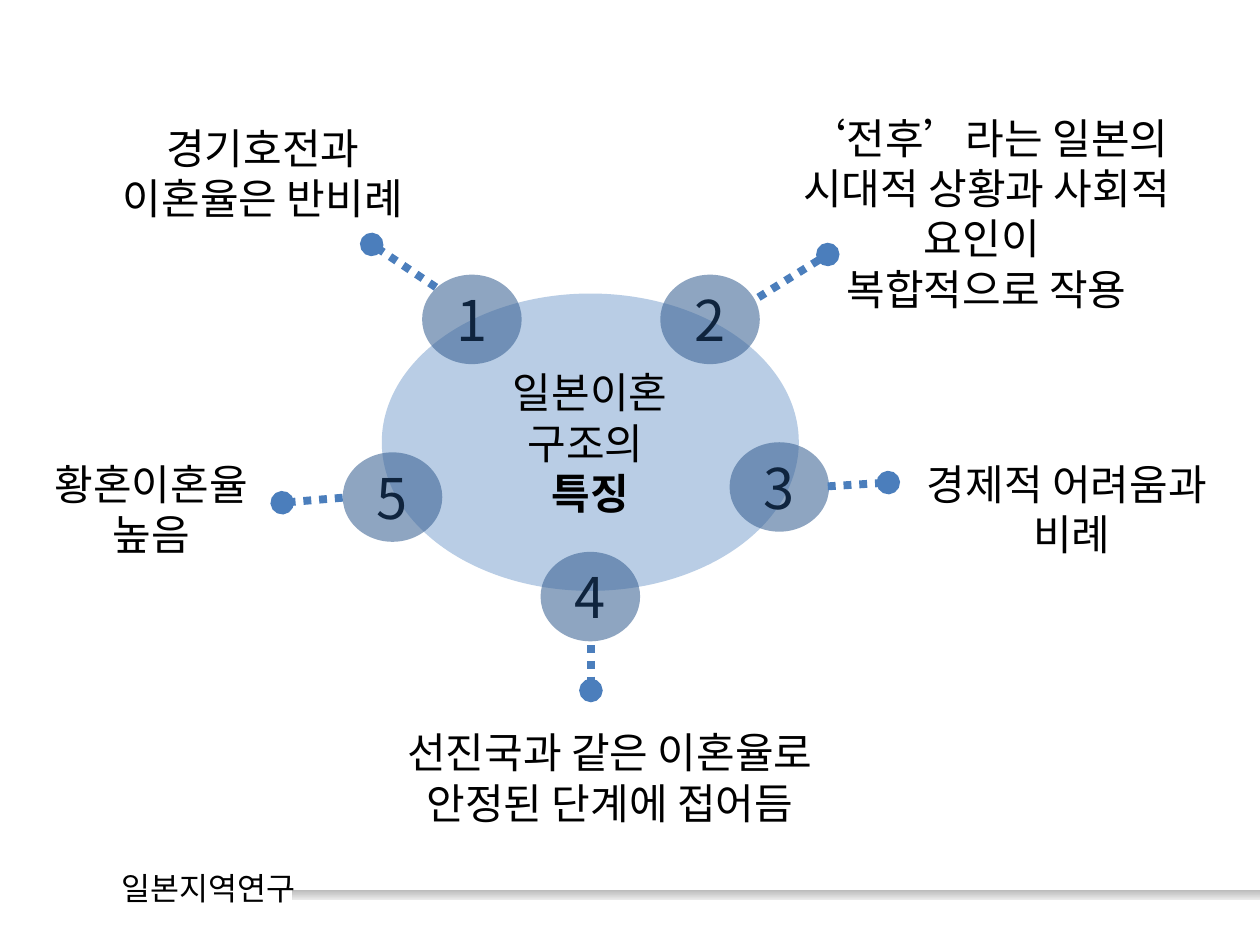
from lxml.etree import SubElement
from pptx import Presentation
from pptx.dml.color import RGBColor
from pptx.enum.dml import MSO_LINE
from pptx.enum.shapes import MSO_CONNECTOR, MSO_SHAPE
from pptx.enum.text import MSO_ANCHOR, MSO_AUTO_SIZE, PP_ALIGN
from pptx.oxml.ns import qn
from pptx.util import Inches, Pt

FONT = "Noto Sans CJK KR"
COLORS = {
    "text": "000000",
    "number": "0F243E",
    "center": "B9CDE5",
    "badge": "376092",
    "pointer": "4B7EBC",
    "bar_top": "B8B8B8",
    "bar_bottom": "E9E9E9",
}
BADGE_SIZE = (0.79, 0.71)

# Badge position, pointer start and end, label box, label paragraphs
FEATURES = [
    ((3.35, 2.18), (3.46, 2.28), (2.95, 1.94), (0.59, 0.92, 2.99, 0.91),
     ["경기호전과 이혼율은 반비례"]),
    ((5.24, 2.18), (6.02, 2.36), (6.57, 2.02), (6.02, 0.84, 3.62, 1.31),
     ["‘전후’라는 일본의 시대적 상황과 사회적 요인이 ", "복합적으로 작용"]),
    ((5.79, 3.51), (6.57, 3.86), (7.05, 3.83), (7.01, 3.59, 2.99, 0.91),
     ["경제적 어려움과 ", "비례"]),
    ((4.29, 4.38), (4.69, 5.12), (4.69, 5.48), (3.11, 5.72, 3.46, 0.91),
     ["선진국과 같은 이혼율로 안정된 단계에 접어듬"]),
    ((2.72, 3.59), (2.72, 3.95), (2.24, 3.99), (0, 3.59, 2.4, 0.94),
     ["황혼이혼율", "높음"]),
]


def color(name):
    return RGBColor.from_string(COLORS[name])


def inches(values):
    return [Inches(value) for value in values]


def write_text(shape, lines, size, color_name="text", bold_last=False):
    """Write one centred paragraph per line, optionally with the last in bold."""
    frame = shape.text_frame
    frame.word_wrap = True
    for index, line in enumerate(lines):
        paragraph = frame.paragraphs[0] if index == 0 else frame.add_paragraph()
        paragraph.alignment = PP_ALIGN.CENTER
        run = paragraph.add_run()
        run.text = line
        font = run.font
        font.name = FONT
        font.size = Pt(size)
        font.color.rgb = color(color_name)
        if bold_last and index == len(lines) - 1:
            font.bold = True
        SubElement(run._r.get_or_add_rPr(), qn("a:ea"), typeface=FONT)


def add_plain_shape(slide, kind, box, fill_name=None, alpha=None):
    """Add a shape without line or shadow; alpha is opacity in percent."""
    shape = slide.shapes.add_shape(kind, *inches(box))
    shape.shadow.inherit = False
    shape.line.fill.background()
    shape.text_frame.vertical_anchor = MSO_ANCHOR.MIDDLE
    if fill_name is None:
        shape.fill.background()
    else:
        shape.fill.solid()
        shape.fill.fore_color.rgb = color(fill_name)
    if alpha is not None:
        rgb = shape._element.spPr.find(f"{qn('a:solidFill')}/{qn('a:srgbClr')}")
        SubElement(rgb, qn("a:alpha"), val=str(alpha * 1000))
    return shape


def add_footer(slide):
    bar = add_plain_shape(slide, MSO_SHAPE.RECTANGLE, (2.32, 7.06, 7.68, 0.08))
    bar.fill.gradient()
    bar.fill.gradient_angle = 270
    for stop, name in zip(bar.fill.gradient_stops, ("bar_top", "bar_bottom")):
        stop.color.rgb = color(name)
    title = add_plain_shape(slide, MSO_SHAPE.ROUNDED_RECTANGLE, (0.75, 6.82, 1.81, 0.45))
    write_text(title, ["일본지역연구"], 18)


def add_center(slide):
    center = add_plain_shape(slide, MSO_SHAPE.OVAL, (3.03, 2.33, 3.31, 2.36), "center")
    write_text(center, ["일본이혼", "구조의 ", "특징"], 24, bold_last=True)


def add_badge(slide, number, position):
    badge = add_plain_shape(slide, MSO_SHAPE.OVAL, position + BADGE_SIZE, "badge", 56)
    write_text(badge, [str(number)], 32, "number")


def add_pointer(slide, start, end):
    """Add a dotted line with a round tip at its end."""
    pointer = slide.shapes.add_connector(MSO_CONNECTOR.STRAIGHT, *inches(start + end))
    pointer.line.color.rgb = color("pointer")
    pointer.line.width = Pt(4.5)
    pointer.line.dash_style = MSO_LINE.ROUND_DOT
    properties = pointer._element.spPr
    line = properties.find(qn("a:ln"))
    line.find(qn("a:prstDash")).set("val", "sysDot")
    SubElement(line, qn("a:tailEnd"), type="oval")
    SubElement(properties, qn("a:effectLst"))


def add_label(slide, box, lines):
    label = slide.shapes.add_textbox(*inches(box))
    write_text(label, lines, 24)
    label.text_frame.auto_size = MSO_AUTO_SIZE.SHAPE_TO_FIT_TEXT


def main():
    presentation = Presentation()
    presentation.slide_width = Inches(10)
    presentation.slide_height = Inches(7.5)
    slide = presentation.slides.add_slide(presentation.slide_layouts[6])

    add_footer(slide)
    add_center(slide)
    for number, (position, *_) in enumerate(FEATURES, start=1):
        add_badge(slide, number, position)
    for _, start, end, box, lines in FEATURES:
        add_pointer(slide, start, end)
        add_label(slide, box, lines)

    presentation.save("out.pptx")


if __name__ == "__main__":
    main()
